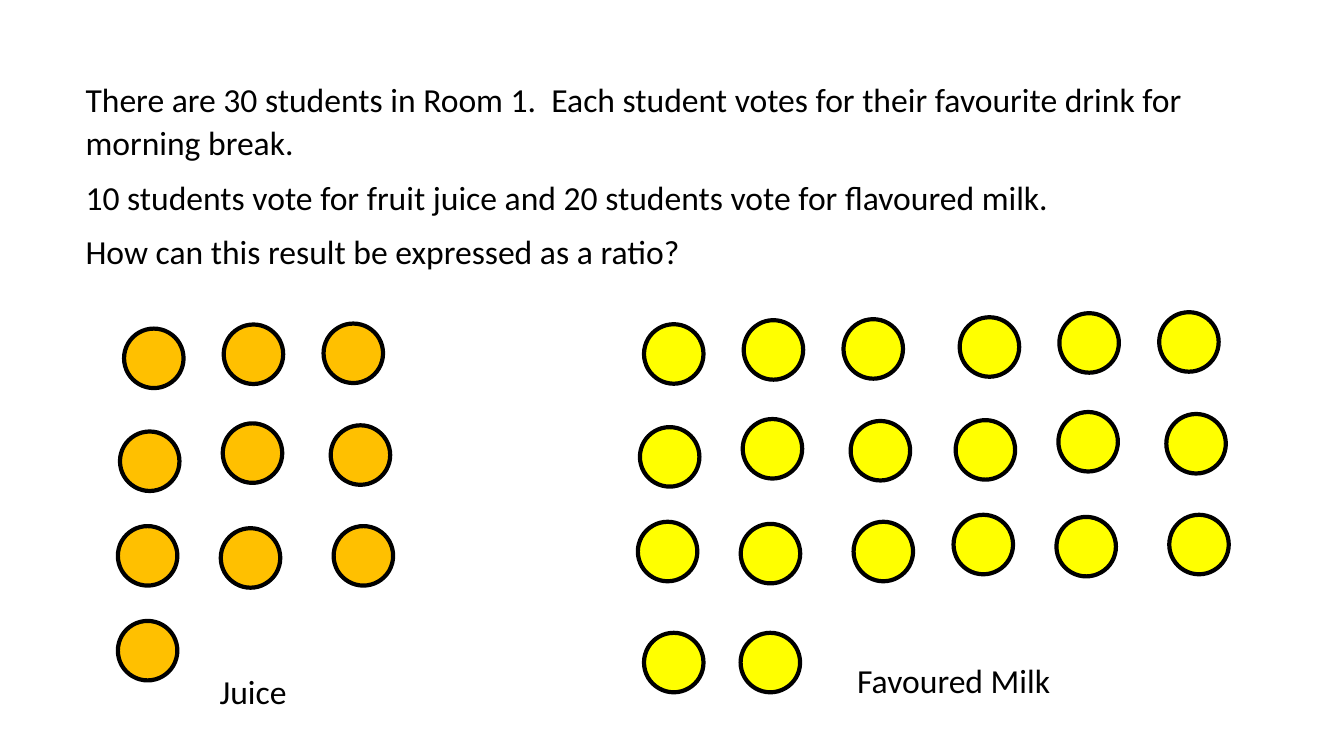
import pptx
import pptx.util
import pptx.dml.color
import pptx.enum.shapes
import pptx.enum.text

Pt = pptx.util.Pt
ALIGN = pptx.enum.text.PP_ALIGN

COLOURS = {"juice": "FFC000", "milk": "FFFF00", "ink": "000000"}
FONT = {"name": "Calibri", "size": Pt(24)}
QUESTION_FORMAT = {"line_spacing": 1.07, "space_after": Pt(8)}
LABEL_FORMAT = {"alignment": ALIGN.CENTER}

QUESTION = [
    "There are 30 students in Room 1.  Each student votes for their favourite drink for morning break.",
    "10 students vote for fruit juice and 20 students vote for flavoured milk.",
    "How can this result be expressed as a ratio?",
]

COUNTER_SIZE = 42.5
# Offsets of nine loosely placed counters, row by row
NINE = [
    (4.4, 3.6), (75.6, 0.7), (146.9, 0),
    (1.5, 77.1), (74.9, 71.3), (152, 72.7),
    (0, 144.7), (73.5, 146.2), (154.1, 144.7),
]
# Drink, left and top of each group of nine
GROUPS = [("juice", 84.2, 231.1), ("milk", 455.6, 228), ("milk", 681.1, 223)]
# Drink, left and top of each counter left over
SINGLES = [("juice", 84.2, 443.5), ("milk", 460, 452), ("milk", 529, 452)]


def rgb(name):
    return pptx.dml.color.RGBColor.from_string(COLOURS[name])


def set_all(obj, values):
    for name, value in values.items():
        setattr(obj, name, value)


def add_text(s, left, top, width, height, lines, paragraph_format, indent=0):
    sp = s.shapes.add_textbox(Pt(left), Pt(top), Pt(width), Pt(height))
    tf = sp.text_frame
    tf.word_wrap = True
    tf.auto_size = pptx.enum.text.MSO_AUTO_SIZE.SHAPE_TO_FIT_TEXT
    for i, line in enumerate(lines):
        p = tf.add_paragraph() if i else tf.paragraphs[0]
        set_all(p, paragraph_format)
        if indent:
            p._p.get_or_add_pPr().set("marL", str(Pt(indent)))
        r = p.add_run()
        r.text = line
        set_all(r.font, FONT)
        r.font.color.rgb = rgb("ink")


def add_counter(s, drink, left, top):
    sp = s.shapes.add_shape(
        pptx.enum.shapes.MSO_SHAPE.OVAL,
        Pt(left), Pt(top), Pt(COUNTER_SIZE), Pt(COUNTER_SIZE),
    )
    sp.shadow.inherit = False
    sp.fill.solid()
    sp.fill.fore_color.rgb = rgb(drink)
    sp.line.color.rgb = rgb("ink")
    sp.line.width = Pt(3)


def main():
    prs = pptx.Presentation()
    prs.slide_width, prs.slide_height = Pt(960), Pt(540)
    s = prs.slides.add_slide(prs.slide_layouts[6])

    add_text(s, 18, 51, 898, 146, QUESTION, QUESTION_FORMAT, indent=36)
    for drink, left, top in GROUPS:
        for dx, dy in NINE:
            add_counter(s, drink, left + dx, top + dy)
    for drink, left, top in SINGLES:
        add_counter(s, drink, left, top)
    add_text(s, 100, 476, 161.5, 36, ["Juice"], LABEL_FORMAT)
    add_text(s, 600.5, 468, 161.5, 36, ["Favoured Milk"], LABEL_FORMAT)

    prs.save("out.pptx")


if __name__ == "__main__":
    main()
